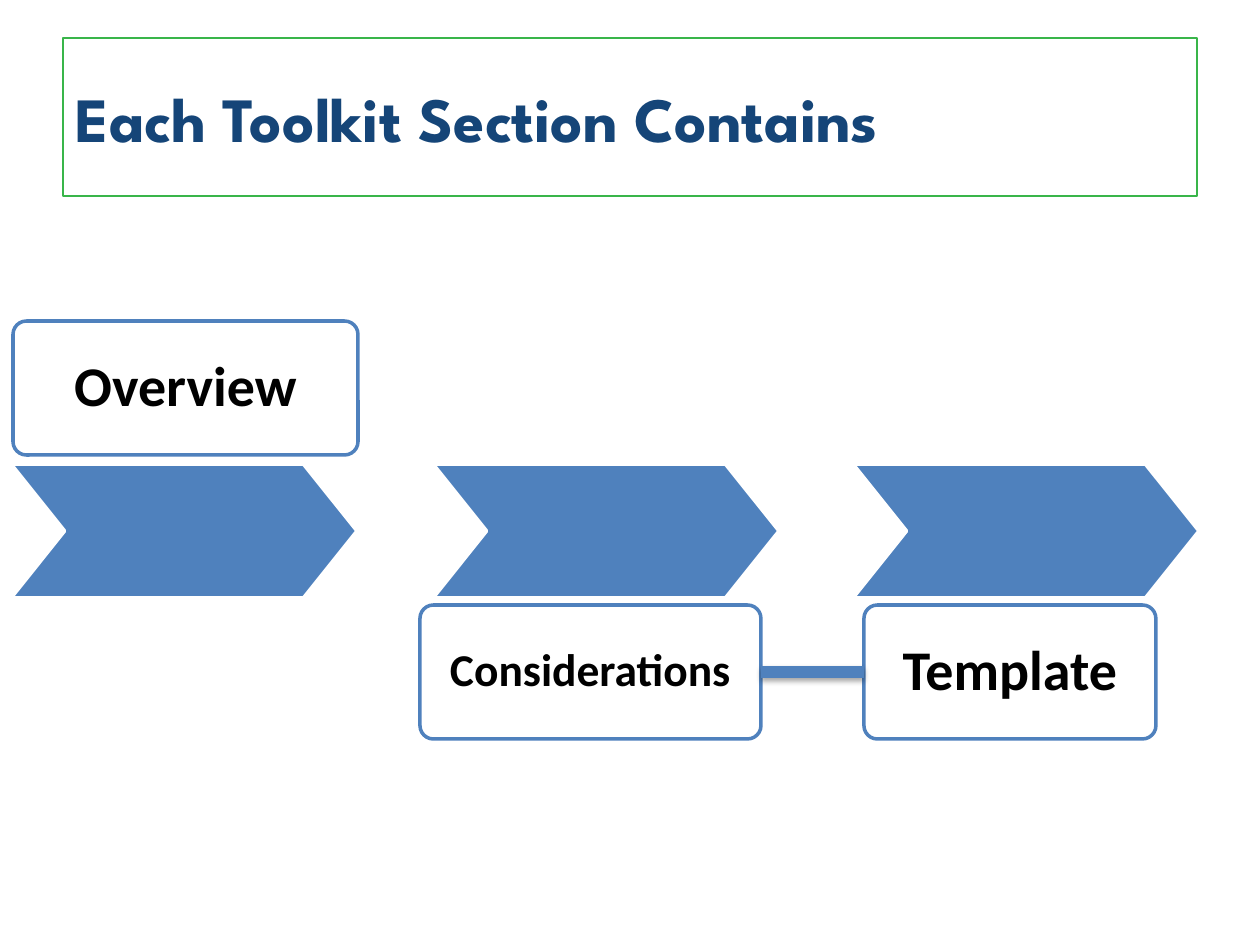
"""Build the toolkit section slide: three chevrons with labelled cards."""
from dataclasses import dataclass

from lxml import etree
from pptx import Presentation
from pptx.dml.color import RGBColor
from pptx.enum.shapes import MSO_CONNECTOR, MSO_SHAPE
from pptx.enum.text import MSO_ANCHOR, PP_ALIGN
from pptx.oxml import parse_xml
from pptx.oxml.ns import nsdecls
from pptx.util import Emu, Pt

STRAIGHT = MSO_CONNECTOR.STRAIGHT
CHEVRON, ROUNDED = MSO_SHAPE.CHEVRON, MSO_SHAPE.ROUNDED_RECTANGLE
MIDDLE = MSO_ANCHOR.MIDDLE
LEFT, CENTER = PP_ALIGN.LEFT, PP_ALIGN.CENTER
LEFT_SIDE, RIGHT_SIDE = 1, 3
TITLE_ONLY = 5
SCALE = 914400 / 126


@dataclass(frozen=True)
class Theme:
    """Colours, fonts and type sizes."""
    blue: str = "4F81BD"
    navy: str = "154578"
    green: str = "39B54A"
    white: str = "FFFFFF"
    black: str = "000000"
    title_font: str = "League Spartan"
    body_font: str = "Calibri"
    title_size: int = 36
    large_size: int = 32
    small_size: int = 26


@dataclass(frozen=True)
class Box:
    """A rectangle in px."""
    left: int
    top: int
    width: int
    height: int


@dataclass(frozen=True)
class Step:
    """A chevron position with its labelled card."""
    label: str
    size: int
    chevron_left: int
    card: Box


THEME = Theme()
TITLE = "Each Toolkit Section Contains"
TITLE_BOX = Box(63, 38, 1134, 158)
CHEVRON_TOP, CHEVRON_WIDTH, ROW_HEIGHT = 464, 346, 134
UPPER, LOWER = 321, 605
STEPS = (
    Step("Overview", THEME.large_size, 11, Box(13, UPPER, 345, ROW_HEIGHT)),
    Step("Considerations", THEME.small_size, 433, Box(420, LOWER, 341, ROW_HEIGHT)),
    Step("Template", THEME.large_size, 853, Box(864, LOWER, 292, ROW_HEIGHT)),
)


def px(length: int) -> Emu:
    """Turn px into EMU."""
    return Emu(round(length * SCALE))


def bounds(box: Box) -> tuple:
    """Return the box as EMU left, top, width and height."""
    return px(box.left), px(box.top), px(box.width), px(box.height)


def apply(target, values: dict) -> None:
    """Set each named attribute on the target."""
    for name, value in values.items():
        setattr(target, name, value)


def set_line(shape, color: str, width: int) -> None:
    """Give the shape a solid outline."""
    shape.line.color.rgb = RGBColor.from_string(color)
    shape.line.width = Pt(width)


def write(shape, text: str, font: str, size: int, color: str, paragraph_format: dict) -> None:
    """Write one bold paragraph, vertically centred."""
    apply(shape.text_frame, {"text": text, "word_wrap": True, "vertical_anchor": MIDDLE})
    paragraph = shape.text_frame.paragraphs[0]
    apply(paragraph, paragraph_format)
    run_font = paragraph.runs[0].font
    apply(run_font, {"name": font, "size": Pt(size), "bold": True})
    run_font.color.rgb = RGBColor.from_string(color)


def add_block(slide, kind, box: Box, adjustment: float, fill: str, line: str):
    """Add a filled and outlined preset shape."""
    shape = slide.shapes.add_shape(kind, *bounds(box))
    shape.shadow.inherit = False
    shape.adjustments[0] = adjustment
    shape.fill.solid()
    shape.fill.fore_color.rgb = RGBColor.from_string(fill)
    set_line(shape, line, 2)
    return shape


def add_step(slide, step: Step):
    """Draw a chevron and its card, and return the card."""
    chevron_box = Box(step.chevron_left, CHEVRON_TOP, CHEVRON_WIDTH, ROW_HEIGHT)
    add_block(slide, CHEVRON, chevron_box, 0.4, THEME.blue, THEME.white)
    card = add_block(slide, ROUNDED, step.card, 0.1, THEME.white, THEME.blue)
    write(card, step.label, THEME.body_font, step.size, THEME.black,
          {"alignment": CENTER, "line_spacing": 0.9})
    return card


def add_link(slide, start, end) -> None:
    """Join two cards with a thick, softly shadowed line."""
    link = slide.shapes.add_connector(STRAIGHT, 0, 0, 0, 0)
    link.begin_connect(start, RIGHT_SIDE)
    link.end_connect(end, LEFT_SIDE)
    set_line(link, THEME.blue, 7)
    effects = parse_xml(f"<a:effectLst {nsdecls('a')}/>")
    shadow = etree.SubElement(effects, effects.tag.replace("effectLst", "outerShdw"),
                              blurRad=str(Pt(3.1)), dist=str(Pt(1.8)),
                              dir="5400000", rotWithShape="0")
    color = etree.SubElement(shadow, effects.tag.replace("effectLst", "srgbClr"),
                             val=THEME.black)
    etree.SubElement(color, effects.tag.replace("effectLst", "alpha"), val="35000")
    link._element.spPr.append(effects)


def add_title(slide) -> None:
    """Place and format the title placeholder."""
    title = slide.shapes.title
    apply(title, dict(zip(("left", "top", "width", "height"), bounds(TITLE_BOX))))
    set_line(title, THEME.green, 1)
    write(title, TITLE, THEME.title_font, THEME.title_size, THEME.navy,
          {"alignment": LEFT})


def main() -> None:
    """Build and save the presentation."""
    presentation = Presentation()
    apply(presentation, {"slide_width": px(1260), "slide_height": px(945)})
    slide = presentation.slides.add_slide(presentation.slide_layouts[TITLE_ONLY])
    add_title(slide)
    _, considerations, template = [add_step(slide, step) for step in STEPS]
    add_link(slide, considerations, template)
    presentation.save("out.pptx")


if __name__ == "__main__":
    main()
